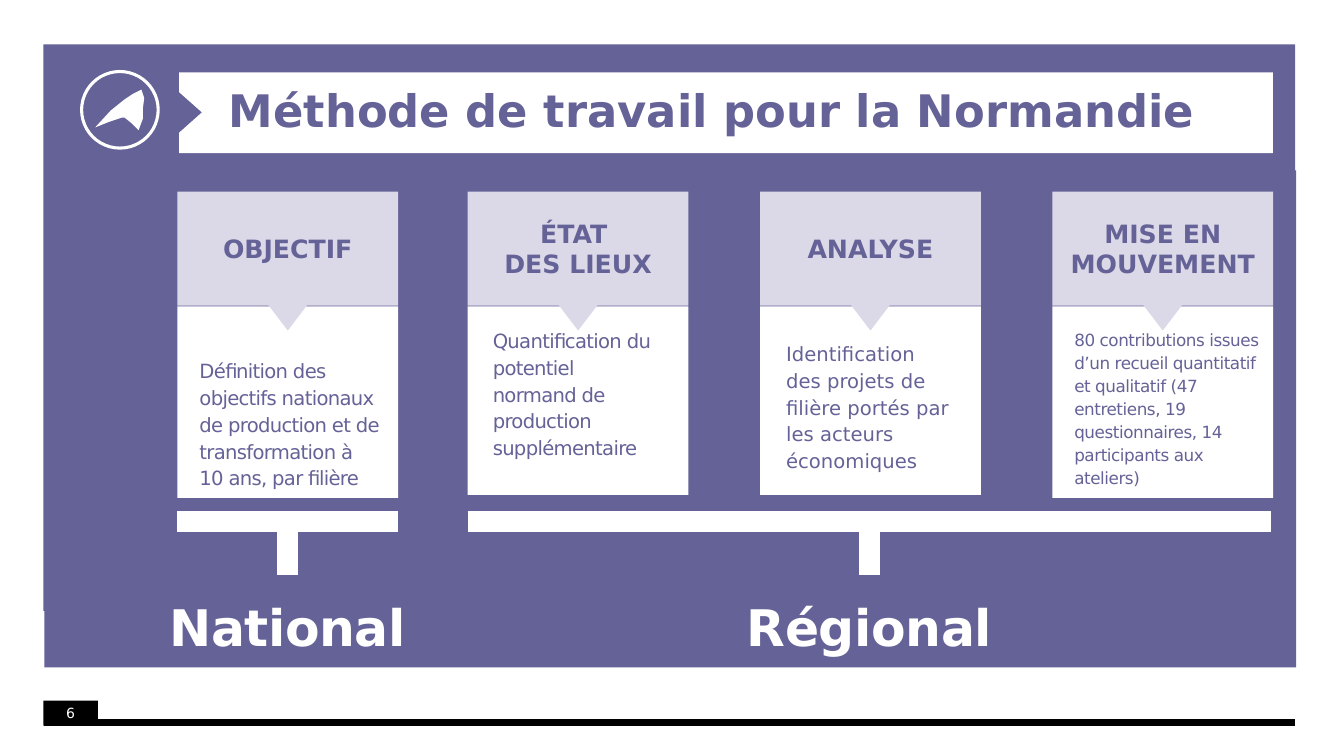
from dataclasses import dataclass

from lxml.etree import SubElement
from pptx import Presentation
from pptx.dml.color import RGBColor
from pptx.enum.shapes import MSO_CONNECTOR, MSO_SHAPE
from pptx.enum.text import MSO_ANCHOR, MSO_AUTO_SIZE, PP_ALIGN
from pptx.oxml.ns import qn
from pptx.util import Pt

FONT = "DejaVu Sans"
PURPLE = "656297"
LILAC = "DBD9E7"
WHITE = "FFFFFF"
BLACK = "000000"

CARD_WIDTH = 157.7
HEADER_TOP = 136.8
HEADER_HEIGHT = 81.6
BODY_TOP = 218.9
POINTER_WIDTH = 29.5
BAR_Y = 372.2
STEM_END = 410.4
LABEL_TOP = 419
LABEL_WIDTH = 235.4

PLANE = [
    (89.3, 83.5), (93.5, 87.5), (99.1, 92.9), (101.5, 85), (102.4, 77.5),
    (102.6, 70), (101.4, 64.2), (95, 66.8), (88.6, 70.6), (79, 78.8),
    (67.7, 90.7), (68, 91.4), (78, 87), (87.1, 83.5),
]


@dataclass
class Area:
    left: float
    top: float
    width: float
    height: float

    def lengths(self) -> list:
        return [Pt(value) for value in (self.left, self.top, self.width, self.height)]


@dataclass
class Style:
    size: float
    color: str
    bold: bool = False
    tracking: float = 0
    align: PP_ALIGN = PP_ALIGN.LEFT
    anchor: MSO_ANCHOR = MSO_ANCHOR.MIDDLE
    spacing: float = 1.0


@dataclass
class Card:
    left: float
    heading: str
    body_height: float
    detail: str
    detail_area: Area
    detail_style: Style


@dataclass
class Bracket:
    start: float
    end: float
    label: str


HEADING = Style(18, PURPLE, True, align=PP_ALIGN.CENTER)
SCOPE = Style(36, WHITE, True, -0.3, PP_ALIGN.CENTER, MSO_ANCHOR.TOP, 1.07)
TIGHT = Style(14, PURPLE, tracking=-0.5, anchor=MSO_ANCHOR.BOTTOM, spacing=1.14)
NORMAL = Style(14, PURPLE, anchor=MSO_ANCHOR.BOTTOM, spacing=1.14)
SMALL = Style(12, PURPLE, tracking=-0.3, spacing=1.14)

CARDS = [
    Card(126.7, "OBJECTIF", 136.8,
         "Définition des objectifs nationaux de production et de transformation à \n"
         "10 ans, par filière",
         Area(135.4, 251.3, 149, 102.2), TIGHT),
    Card(334.1, "ÉTAT \nDES LIEUX", 134.6,
         "Quantification du potentiel normand de production supplémentaire",
         Area(344.9, 249.1, 135.4, 82.8), TIGHT),
    Card(542.9, "ANALYSE", 134.6,
         "Identification des projets de filière portés par les acteurs économiques",
         Area(554.4, 239, 135.4, 102.2), NORMAL),
    Card(751.7, "MISE EN MOUVEMENT", 136.8,
         "80 contributions issues d’un recueil quantitatif et qualitatif (47 entretiens, "
         "19 questionnaires, 14 participants aux ateliers)",
         Area(760.3, 230.4, 146.9, 121.7), SMALL),
]

BRACKETS = [
    Bracket(334.1, 907.9, "Régional"),
    Bracket(126.7, 284.4, "National"),
]


def rgb(color: str) -> RGBColor:
    return RGBColor.from_string(color)


def write(shape, text: str, style: Style) -> None:
    frame = shape.text_frame
    frame.word_wrap = True
    frame.vertical_anchor = style.anchor
    para = frame.paragraphs[0]
    para.alignment = style.align
    para.line_spacing = style.spacing
    for index, line in enumerate(text.split("\n")):
        if index:
            para.add_line_break()
        span = para.add_run()
        span.text = line
        span.font.name = FONT
        span.font.size = Pt(style.size)
        span.font.bold = style.bold
        span.font.color.rgb = rgb(style.color)
        if style.tracking:
            span._r.get_or_add_rPr().set("spc", str(round(style.tracking * 100)))


def add_block(page, area: Area, color: str, kind=MSO_SHAPE.RECTANGLE, rotation: float = 0):
    shape = page.shapes.add_shape(kind, *area.lengths())
    shape.shadow.inherit = False
    shape.fill.solid()
    shape.fill.fore_color.rgb = rgb(color)
    shape.line.fill.background()
    shape.rotation = rotation
    return shape


def add_line(page, start: tuple, end: tuple, color: str, weight: float) -> None:
    line = page.shapes.add_connector(
        MSO_CONNECTOR.STRAIGHT, *[Pt(value) for value in (*start, *end)])
    line.line.color.rgb = rgb(color)
    line.line.width = Pt(weight)
    SubElement(line._element.spPr, qn("a:effectLst"))


def add_text(page, area: Area, text: str, style: Style) -> None:
    box = page.shapes.add_textbox(*area.lengths())
    write(box, text, style)
    box.text_frame.auto_size = MSO_AUTO_SIZE.SHAPE_TO_FIT_TEXT


def add_emblem(page) -> None:
    ring = page.shapes.add_shape(MSO_SHAPE.OVAL, *Area(58.3, 51.1, 54.7, 54.7).lengths())
    ring.shadow.inherit = False
    ring.fill.background()
    ring.line.color.rgb = rgb(WHITE)
    ring.line.width = Pt(2.21)
    builder = page.shapes.build_freeform(*PLANE[0], scale=Pt(1))
    builder.add_line_segments(PLANE[1:], close=True)
    plane = builder.convert_to_shape()
    plane.shadow.inherit = False
    plane.fill.solid()
    plane.fill.fore_color.rgb = rgb(WHITE)
    plane.line.fill.background()


def add_title(page) -> None:
    title = page.shapes.title
    page.shapes._spTree.append(title._element)
    title.left, title.top, title.width, title.height = Area(163.4, 51.8, 761.8, 57.6).lengths()
    frame = title.text_frame
    frame.auto_size = MSO_AUTO_SIZE.NONE
    frame.margin_left = frame.margin_top = frame.margin_right = frame.margin_bottom = 0
    write(title, "Méthode de travail pour la Normandie", Style(32, PURPLE, True, spacing=0.9))


def add_card(page, card: Card) -> None:
    add_block(page, Area(card.left, BODY_TOP, CARD_WIDTH, card.body_height), WHITE)
    pointer_left = card.left + (CARD_WIDTH - POINTER_WIDTH) / 2
    add_block(page, Area(pointer_left, 216.7, POINTER_WIDTH, 19.4), LILAC,
              MSO_SHAPE.ISOSCELES_TRIANGLE, 180)
    header = add_block(page, Area(card.left, HEADER_TOP, CARD_WIDTH, HEADER_HEIGHT), LILAC)
    write(header, card.heading, HEADING)
    add_text(page, card.detail_area, card.detail, card.detail_style)


def add_bracket(page, bracket: Bracket) -> None:
    middle = (bracket.start + bracket.end) / 2
    add_line(page, (bracket.start, BAR_Y), (bracket.end, BAR_Y), WHITE, 15)
    add_line(page, (middle, BAR_Y), (middle, STEM_END), WHITE, 15)
    add_text(page, Area(middle - LABEL_WIDTH / 2, LABEL_TOP, LABEL_WIDTH, 49.7),
             bracket.label, SCOPE)


def main() -> None:
    deck = Presentation()
    deck.slide_width, deck.slide_height = Pt(960), Pt(540)
    page = deck.slides.add_slide(deck.slide_layouts[5])
    add_block(page, Area(31, 31.7, 894.2, 404.6), PURPLE)
    add_block(page, Area(31.7, 121.7, 894.2, 355), PURPLE)
    add_line(page, (925.2, 516.2), (31.7, 516.2), BLACK, 5)
    page_number = add_block(page, Area(31, 500.4, 38.9, 18), BLACK)
    write(page_number, "6", Style(10, WHITE, align=PP_ALIGN.CENTER))
    add_block(page, Area(127.9, 51.8, 781.4, 57.6), WHITE)
    add_block(page, Area(121, 72, 29.5, 16.6), PURPLE, MSO_SHAPE.ISOSCELES_TRIANGLE, 90)
    add_emblem(page)
    add_title(page)
    for card in CARDS:
        add_card(page, card)
    for bracket in BRACKETS:
        add_bracket(page, bracket)
    deck.save("out.pptx")


if __name__ == "__main__":
    main()
